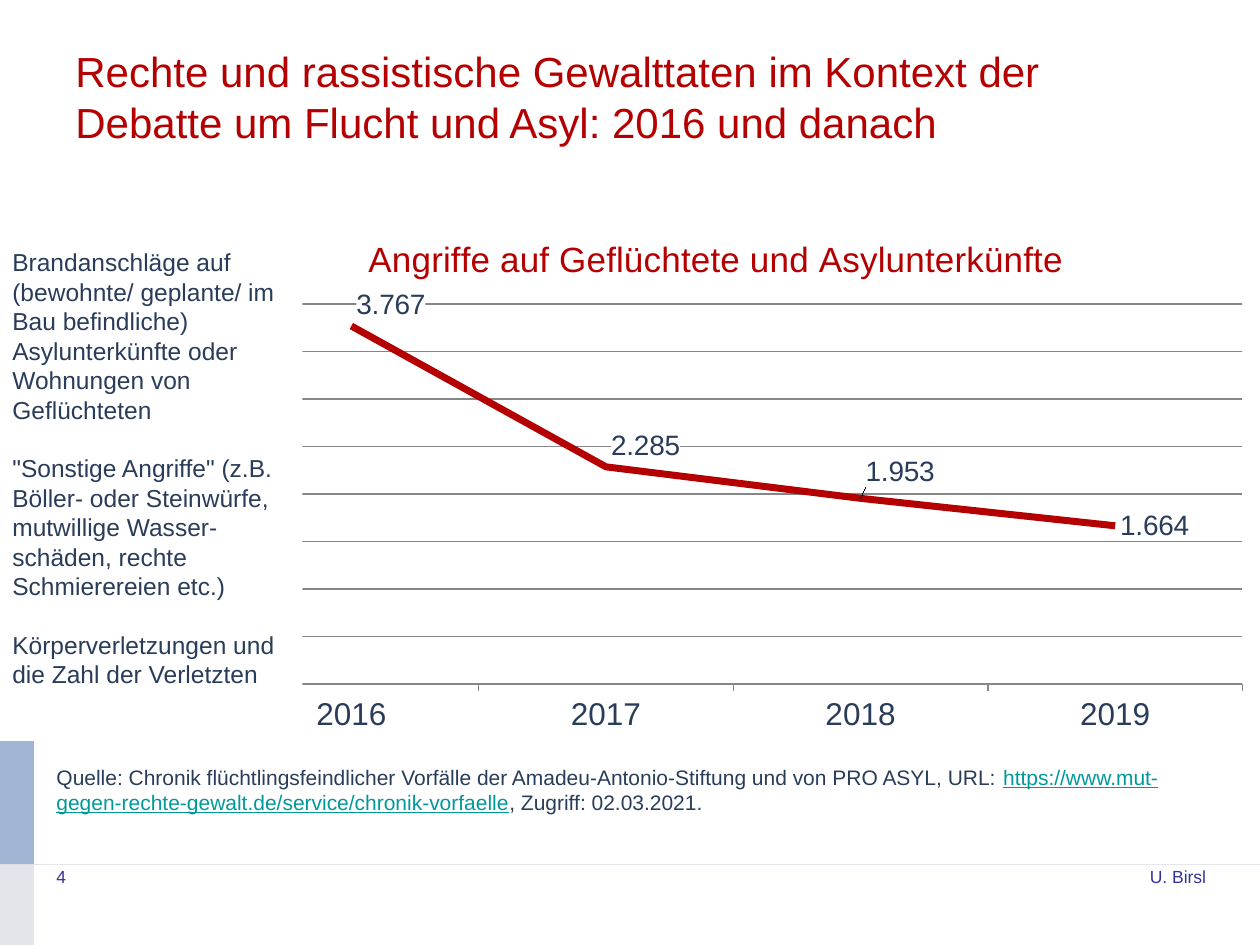
from typing import NamedTuple

from pptx import Presentation
from pptx.chart.data import CategoryChartData
from pptx.dml.color import RGBColor
from pptx.enum.chart import XL_CHART_TYPE, XL_LABEL_POSITION, XL_MARKER_STYLE, XL_TICK_MARK
from pptx.enum.shapes import MSO_CONNECTOR, MSO_SHAPE
from pptx.enum.text import MSO_ANCHOR, PP_ALIGN
from pptx.oxml import parse_xml
from pptx.oxml.ns import nsdecls, qn
from pptx.util import Inches, Pt

HUES = {"white": "FFFFFF", "red": "B40000", "ink": "293C59", "link": "009999",
        "foot": "333399", "blue": "A1B6D4", "pale": "E4E5EA", "grid": "868686"}
FONT = "Arial"
HEAD = "Angriffe auf Geflüchtete und Asylunterkünfte"


class Run(NamedTuple):
    text: str
    hue: str = "ink"
    line: bool = False


class Bar(NamedTuple):
    top: float
    height: float
    hue: str


class Box(NamedTuple):
    place: tuple[float, float, float, float]
    size: float
    paras: list[list[Run]]
    anchor: MSO_ANCHOR = MSO_ANCHOR.MIDDLE
    align: PP_ALIGN = PP_ALIGN.LEFT
    gap: float = 0
    fill: str = ""


class Spot(NamedTuple):
    year: str
    count: int
    shift: float


BARS = [Bar(5.51, 1.35, "blue"), Bar(6.86, 0.64, "pale")]

SPOTS = [Spot("2016", 3767, -0.04), Spot("2017", 2285, -0.04),
         Spot("2018", 1953, -0.05), Spot("2019", 1664, 0)]

KINDS = Box((0, 1.55, 2.4, 4.33), 14, [
    [Run("Brandanschläge auf (bewohnte/ geplante/ im Bau befindliche) "
         "Asylunterkünfte oder Wohnungen von Geflüchteten")],
    [Run('"Sonstige Angriffe" (z.B. Böller- oder Steinwürfe, mutwillige '
         "Wasser-schäden, rechte Schmierereien etc.)")],
    [Run("Körperverletzungen und die Zahl der Verletzten")],
], gap=16.8, fill="white")

TITLE = Box((0.5, 0.3, 9, 0.93), 24, [[
    Run("Rechte und rassistische Gewalttaten im Kontext der "
        "Debatte um Flucht und Asyl: 2016 und danach", "red")]])

SOURCE = Box((0.35, 5.95, 9, 0.63), 12, [[
    Run("Quelle: Chronik flüchtlingsfeindlicher Vorfälle der "
        "Amadeu-Antonio-Stiftung und von PRO ASYL, URL: "),
    Run("https://www.mut-gegen-rechte-gewalt.de/service/chronik-vorfaelle", "link", True),
    Run(", Zugriff: 02.03.2021.")]])

PAGE = Box((0.35, 6.82, 2.33, 0.52), 10, [[Run("4", "foot")]], MSO_ANCHOR.TOP)
NAME = Box((6.5, 6.82, 3.17, 0.52), 10, [[Run("U. Birsl", "foot")]],
           MSO_ANCHOR.TOP, PP_ALIGN.RIGHT)


def tint(key: str) -> RGBColor:
    return RGBColor.from_string(HUES[key])


def style(font, size: float, hue: str, line: bool = False) -> None:
    looks = {"name": FONT, "size": Pt(size), "bold": False, "underline": line}
    for key, value in looks.items():
        setattr(font, key, value)
    font.color.rgb = tint(hue)


def draw_bar(slide, bar: Bar) -> None:
    shape = slide.shapes.add_shape(MSO_SHAPE.RECTANGLE, 0, Inches(bar.top),
                                   Inches(0.27), Inches(bar.height))
    shape.shadow.inherit = False
    shape.fill.solid()
    shape.fill.fore_color.rgb = tint(bar.hue)
    shape.line.fill.background()


def draw_rule(slide, top: float) -> None:
    rule = slide.shapes.add_connector(MSO_CONNECTOR.STRAIGHT, 0, Inches(top),
                                      Inches(10), Inches(top))
    rule.line.color.rgb = tint("pale")
    rule.line.width = Pt(0.5)
    rule._element.spPr.append(parse_xml(f"<a:effectLst {nsdecls('a')}/>"))


def draw_box(slide, box: Box) -> None:
    shape = slide.shapes.add_textbox(*map(Inches, box.place))
    if box.fill:
        shape.fill.solid()
        shape.fill.fore_color.rgb = tint(box.fill)
    frame = shape.text_frame
    frame.word_wrap = True
    frame.vertical_anchor = box.anchor
    for i, runs in enumerate(box.paras):
        para = frame.add_paragraph() if i else frame.paragraphs[0]
        para.alignment = box.align
        para.space_before = Pt(box.gap if i else 0)
        for item in runs:
            run = para.add_run()
            run.text = item.text
            style(run.font, box.size, item.hue, item.line)


def layout(inner: str = "", **spans: float):
    """Manual chart layout in fractions of the chart's size."""
    parts = f'<c:layoutTarget val="{inner}"/>' if inner else ""
    if inner or "edge" in spans:
        spans.pop("edge", None)
        parts += '<c:xMode val="edge"/><c:yMode val="edge"/>'
    parts += "".join(f'<c:{key} val="{value}"/>' for key, value in spans.items())
    return parse_xml(f"<c:layout {nsdecls('c')}><c:manualLayout>{parts}"
                     "</c:manualLayout></c:layout>")


def place(parent, after: str, node) -> None:
    for old in parent.findall(qn("c:layout")):
        parent.remove(old)
    if after:
        parent.find(qn(after)).addnext(node)
    else:
        parent.insert(0, node)


def draw_labels(series) -> None:
    for i, spot in enumerate(SPOTS):
        label = series.points[i].data_label
        style(label.font, 16, "ink")
        label.position = XL_LABEL_POSITION.RIGHT
    nodes = series._element.findall(f"{qn('c:dLbls')}/{qn('c:dLbl')}")
    for node, spot in zip(nodes, SPOTS):
        form = parse_xml(f"<c:numFmt {nsdecls('c')} formatCode='0\".\"000' sourceLinked='0'/>")
        fill = parse_xml(f"<c:spPr {nsdecls('c', 'a')}><a:solidFill><a:srgbClr "
                         f"val='{HUES['white']}'/></a:solidFill></c:spPr>")
        for old in node.findall(qn("c:spPr")):
            node.remove(old)
        node.find(qn("c:txPr")).addprevious(form)
        form.addnext(fill)
        if spot.shift:
            place(node, "c:idx", layout(x=0, y=spot.shift))


def draw_chart(slide) -> None:
    data = CategoryChartData()
    data.categories = [spot.year for spot in SPOTS]
    data.add_series(HEAD, [spot.count for spot in SPOTS])
    chart = slide.shapes.add_chart(XL_CHART_TYPE.LINE, Inches(1.61), Inches(1.7),
                                   Inches(8.42), Inches(4.19), data).chart
    style(chart.font, 18, "ink")
    chart.has_legend = False

    # Heading
    chart.has_title = True
    para = chart.chart_title.text_frame.paragraphs[0]
    run = para.add_run()
    run.text = HEAD
    style(run.font, 20, "red")
    place(chart.chart_title._element, "c:tx", layout(edge=1, x=0.15, y=0.03))
    place(chart._chartSpace.chart.plotArea, "",
          layout("inner", x=0.02, y=0.17, w=0.96, h=0.72))

    # Axes
    axis = chart.value_axis
    scale = {"minimum_scale": 0, "maximum_scale": 4000, "major_unit": 500,
             "has_major_gridlines": True, "visible": False}
    for key, value in scale.items():
        setattr(axis, key, value)
    years = chart.category_axis
    years.major_tick_mark = XL_TICK_MARK.OUTSIDE
    style(years.tick_labels.font, 18, "ink")
    for line in (axis.major_gridlines.format.line, years.format.line):
        line.color.rgb = tint("grid")
        line.width = Pt(0.75)

    # Curve
    chart.plots[0].vary_by_categories = False
    series = chart.plots[0].series[0]
    series.smooth = False
    series.marker.style = XL_MARKER_STYLE.NONE
    series.format.line.color.rgb = tint("red")
    series.format.line.width = Pt(4)
    draw_labels(series)


def main() -> None:
    deck = Presentation()
    deck.slide_width, deck.slide_height = Inches(10), Inches(7.5)
    slide = deck.slides.add_slide(deck.slide_layouts[6])
    # Edge strip and foot rule
    draw_rule(slide, 6.86)
    for bar in BARS:
        draw_bar(slide, bar)
    # Foot texts, chart, then the texts that lie over it
    for box in (SOURCE, NAME, PAGE):
        draw_box(slide, box)
    draw_chart(slide)
    for box in (KINDS, TITLE):
        draw_box(slide, box)
    deck.save("out.pptx")


if __name__ == "__main__":
    main()
